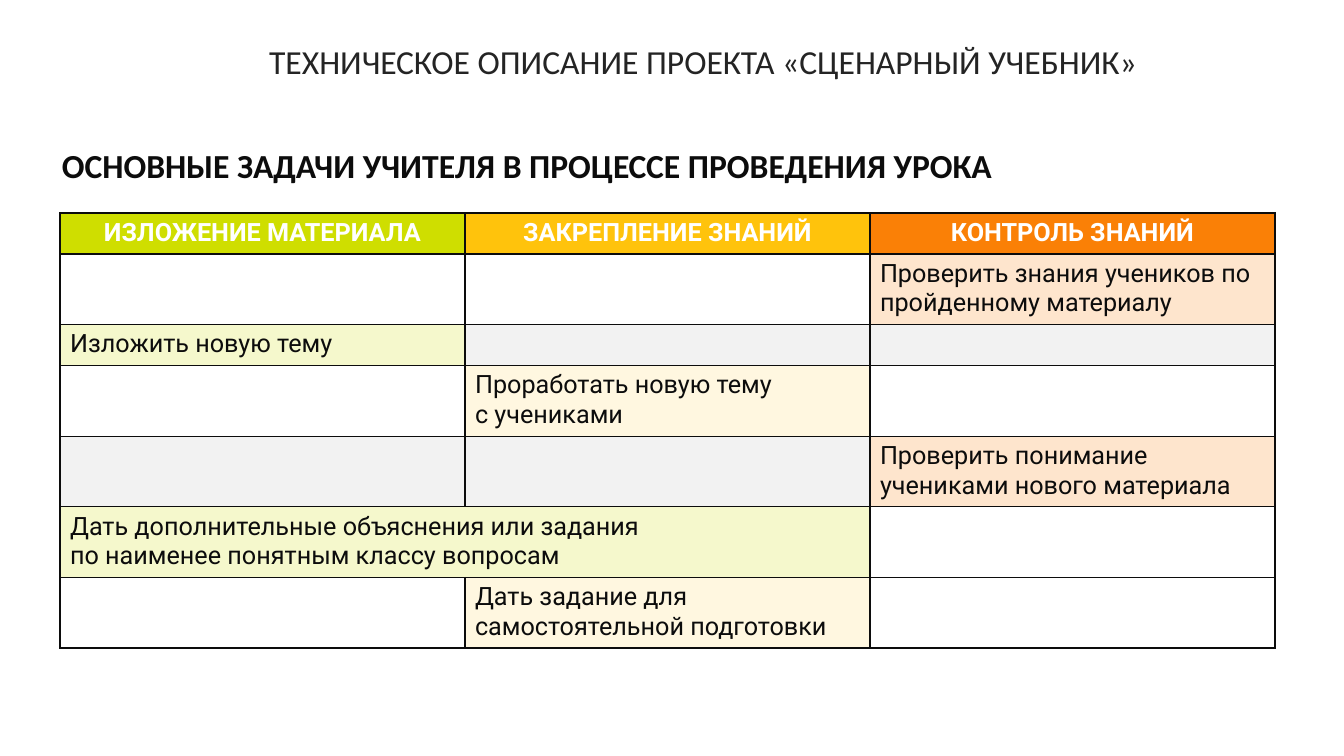
"""Build the slide about a teacher's main tasks during a lesson."""
from dataclasses import dataclass

from lxml.etree import SubElement
from pptx import Presentation
from pptx.dml.color import RGBColor as Rgb
from pptx.enum.text import MSO_ANCHOR as Anchor, MSO_AUTO_SIZE as AutoSize, PP_ALIGN as Align
from pptx.oxml import parse_xml
from pptx.oxml.ns import nsdecls, qn
from pptx.util import Pt

EMU_PER_PX = 914400 / 100.8


@dataclass(frozen=True)
class Theme:
    heading_font: str = "Calibri"
    table_font: str = "Roboto"
    heading_size: int = 24
    table_size: int = 18
    title: str = "242424"
    ink: str = "0C0C0C"
    white: str = "FFFFFF"
    lime: str = "CFDE00"
    amber: str = "FFC30C"
    orange: str = "FA8006"
    cream: str = "FFF7E0"
    gray: str = "F2F2F2"
    tint_alpha: int = 20000
    border_width: int = 1


theme = Theme()


def px(length):
    return round(length * EMU_PER_PX)


def write(frame, text, font=theme.heading_font, size=theme.heading_size,
          color=theme.ink, bold=False, align=Align.LEFT):
    frame.word_wrap = True
    for index, line in enumerate(text.split("\n")):
        para = frame.add_paragraph() if index else frame.paragraphs[0]
        para.alignment = align
        span = para.add_run()
        span.text = line
        span.font.name = font
        span.font.size = Pt(size)
        span.font.bold = bold
        span.font.color.rgb = Rgb.from_string(color)


deck = Presentation()
deck.slide_width, deck.slide_height = px(1344), px(756)
page = deck.slides.add_slide(deck.slide_layouts[5])

title = page.shapes.title
title.left, title.top, title.width, title.height = px(259), px(36), px(913), px(65)
title.text_frame.auto_size = AutoSize.NONE
title.text_frame.vertical_anchor = Anchor.TOP
write(title.text_frame, "ТЕХНИЧЕСКОЕ ОПИСАНИЕ ПРОЕКТА «СЦЕНАРНЫЙ УЧЕБНИК»", color=theme.title)

subtitle = page.shapes.add_textbox(px(52), px(140), px(1119), px(50))
write(subtitle.text_frame, "ОСНОВНЫЕ ЗАДАЧИ УЧИТЕЛЯ В ПРОЦЕССЕ ПРОВЕДЕНИЯ УРОКА", bold=True)

headers = [
    ("ИЗЛОЖЕНИЕ МАТЕРИАЛА", theme.lime),
    ("ЗАКРЕПЛЕНИЕ ЗНАНИЙ", theme.amber),
    ("КОНТРОЛЬ ЗНАНИЙ", theme.orange),
]
tasks = {
    (1, 2): "Проверить знания учеников по пройденному материалу",
    (2, 0): "Изложить новую тему",
    (3, 1): "Проработать новую тему\nс учениками",
    (4, 2): "Проверить понимание учениками нового материала",
    (5, 0): "Дать дополнительные объяснения или задания\nпо наименее понятным классу вопросам",
    (6, 1): "Дать задание для самостоятельной подготовки",
}
task_fills = [theme.lime, theme.cream, theme.orange]
gray_rows = (2, 4)
row_count, column_count = 7, len(headers)

table = page.shapes.add_table(row_count, column_count, px(60), px(213),
                              px(405 * column_count), px(41 * row_count)).table
table.first_row = table.horz_banding = False
for column in table.columns:
    column.width = px(405)
for row in table.rows:
    row.height = px(41)
table.cell(5, 0).merge(table.cell(5, 1))

for row in range(row_count):
    for column in range(column_count):
        cell = table.cell(row, column)
        text, fill, tinted = tasks.get((row, column)), None, False
        if row == 0:
            text, fill = headers[column]
            write(cell.text_frame, text, font=theme.table_font, size=theme.table_size,
                  color=theme.white, bold=True, align=Align.CENTER)
        elif text:
            fill = task_fills[column]
            tinted = fill != theme.cream
            write(cell.text_frame, text, font=theme.table_font, size=theme.table_size)
        elif row in gray_rows:
            fill = theme.gray

        if fill:
            cell.fill.solid()
            cell.fill.fore_color.rgb = Rgb.from_string(fill)
        else:
            cell.fill.background()
        properties = cell._tc.get_or_add_tcPr()
        if tinted:
            tint = properties.find(f".//{qn('a:srgbClr')}")
            SubElement(tint, qn("a:alpha"), val=str(theme.tint_alpha))
        for position, side in enumerate("LRTB"):
            properties.insert(position, parse_xml(
                f'<a:ln{side} {nsdecls("a")} w="{Pt(theme.border_width)}"><a:solidFill>'
                f'<a:srgbClr val="{theme.ink}"/></a:solidFill></a:ln{side}>'))

deck.save("out.pptx")
